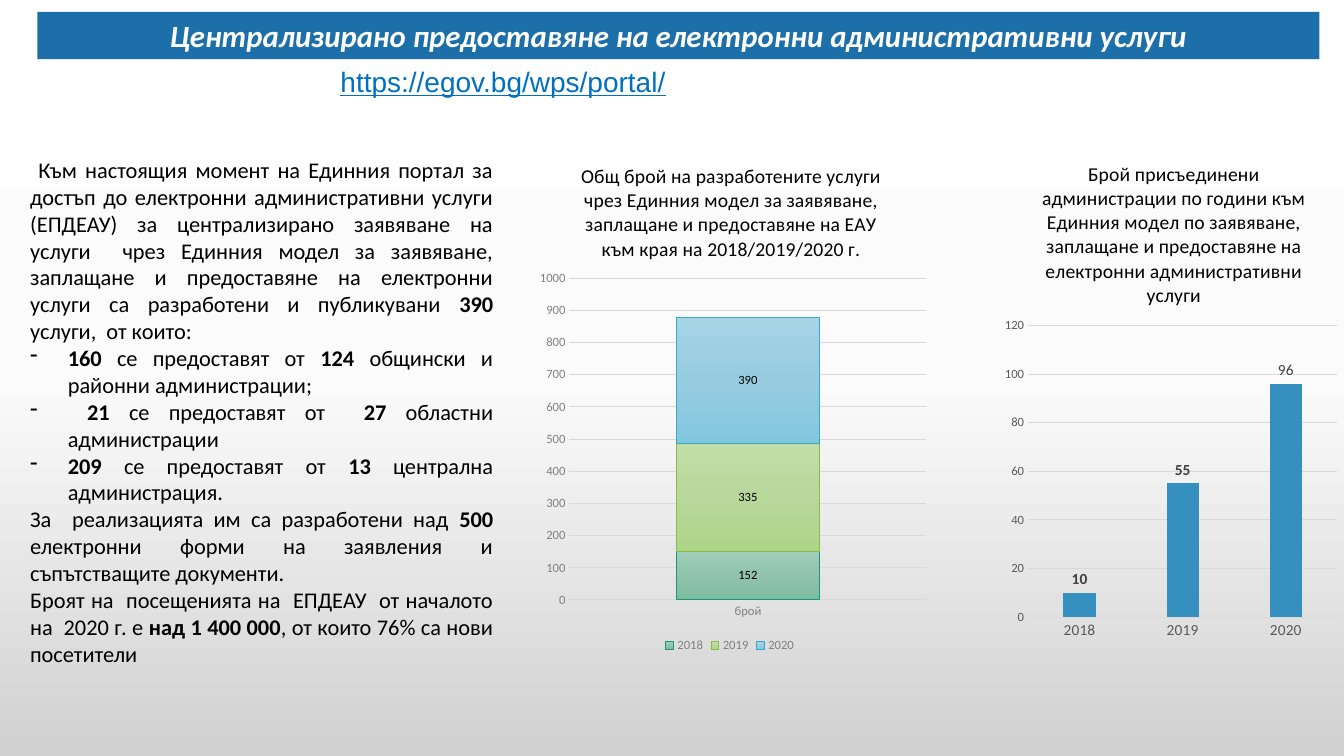
from copy import deepcopy
from dataclasses import dataclass
from typing import Any

from lxml.etree import SubElement
from pptx import Presentation
from pptx.chart.data import CategoryChartData
from pptx.dml.color import RGBColor
from pptx.enum.chart import XL_CHART_TYPE, XL_LABEL_POSITION, XL_LEGEND_POSITION, XL_TICK_MARK
from pptx.enum.shapes import MSO_SHAPE
from pptx.enum.text import MSO_ANCHOR, MSO_AUTO_SIZE, PP_ALIGN
from pptx.oxml.ns import qn
from pptx.util import Cm, Pt


@dataclass(frozen=True)
class Theme:
    """Colours and type sizes of the slide."""
    back: tuple = ("FFFFFF", "FBFBFB", "D1D1D1")
    bar: str = "1D6FA9"
    white: str = "FFFFFF"
    black: str = "000000"
    link: str = "0070C0"
    grid: str = "D9D9D9"
    gray: str = "808080"
    dark: str = "595959"
    label: str = "404040"
    blue: str = "3590BF"
    head: float = 22
    url: float = 20
    body: float = 16
    title: float = 14
    mid: float = 11
    small: float = 9


@dataclass(frozen=True)
class Series:
    """One series with its fill shades and outline."""
    name: str
    vals: tuple
    shades: tuple
    edge: str = ""


@dataclass(frozen=True)
class Graph:
    """One column chart with its place and plot area."""
    kind: Any
    box: tuple
    plot: tuple
    title: str
    cats: tuple
    series: tuple
    gap: int
    lap: int
    top: int
    step: int
    ink: str
    size: float
    legend: bool = False


THEME = Theme()
URL = "https://egov.bg/wps/portal/"
HEAD = "Централизирано предоставяне на електронни административни услуги"
BODY = (
    (False, " Към настоящия момент на Единния портал за достъп до електронни административни услуги "
            "(ЕПДЕАУ) за централизирано заявяване на услуги  чрез Единния модел за заявяване, "
            "заплащане и предоставяне на електронни услуги са разработени и публикувани "
            "*390* услуги,  от които: "),
    (True, "*160 *се предоставят от *124 *общински и районни администрации; "),
    (True, " *21* се предоставят от  *27* областни администрации"),
    (True, "*209 *се предоставят от *13* централна администрация. "),
    (False, "За  реализацията им са разработени над *500* електронни форми на заявления "
            "и съпътстващите документи. "),
    (False, "Броят на  посещенията на  ЕПДЕАУ  от началото на  2020 г. е "
            "*над 1 400 000*, от които 76% са нови посетители"),
)
GRAPHS = (
    Graph(XL_CHART_TYPE.COLUMN_CLUSTERED, (25.12, 3.43, 8.76, 12.9), (0.09, 0.37, 0.89, 0.57),
          "Брой присъединени администрации по години към Единния модел по заявяване, "
          "заплащане и предоставяне на електронни административни услуги",
          ("2018", "2019", "2020"), (Series("Series 1", (10, 55, 96), (THEME.blue,)),),
          219, -27, 120, 20, THEME.dark, THEME.mid),
    Graph(XL_CHART_TYPE.COLUMN_STACKED, (13.34, 3.48, 10.11, 13.08), (0.1, 0.27, 0.89, 0.62),
          "Общ брой на разработените услуги чрез Единния модел за заявяване, "
          "заплащане и предоставяне на ЕАУ към края на 2018/2019/2020 г.",
          ("брой",),
          (Series("2018", (152,), ("9ECDBA", "91C2AE", "7DBCA3"), "1C9775"),
           Series("2019", (335,), ("C2DEA8", "B8D79B", "AED588"), "88BD43"),
           Series("2020", (390,), ("A5D4E5", "97CCE0", "83C7DF"), "35ABC9")),
          150, 100, 1000, 100, THEME.gray, THEME.small, True),
)


def put(item: Any, vals: dict) -> None:
    """Set each named value on the item."""
    for key, val in vals.items():
        setattr(item, key, val)


def ink(font: Any, size: float, tint: str, face: str = "Calibri", **more: Any) -> None:
    """Style a font."""
    put(font, {"name": face, "size": Pt(size), **more})
    font.color.rgb = RGBColor.from_string(tint)


def rule(line: Any, tint: str) -> None:
    """Style a thin line."""
    line.width = Pt(0.75)
    line.color.rgb = RGBColor.from_string(tint)


def paint(fill: Any, root: Any, shades: tuple) -> None:
    """Fill with one colour or with a downward three-stop gradient."""
    if len(shades) == 1:
        fill.solid()
        fill.fore_color.rgb = RGBColor.from_string(shades[0])
        return
    fill.gradient()
    fill.gradient_angle = 270
    stops = next(root.iter(qn("a:gsLst")))
    stops.insert(1, deepcopy(stops[0]))
    for stop, tint, pos in zip(fill.gradient_stops, shades, (0, 0.5, 1)):
        stop.color.rgb = RGBColor.from_string(tint)
        stop.position = pos


def place(root: Any, vals: dict) -> None:
    """Give a chart part a manual layout."""
    for old in root.findall(qn("c:layout")):
        root.remove(old)
    lay = SubElement(root, qn("c:layout"))
    man = SubElement(lay, qn("c:manualLayout"))
    for key, val in vals.items():
        SubElement(man, qn(f"c:{key}")).set("val", str(val))
    spot = 1 if root.find(qn("c:tx")) is not None else 0
    root.insert(spot, lay)


def write(shape: Any, rows: tuple, align: Any, **style: Any) -> None:
    """Write paragraphs, with starred parts in bold and dashes where asked."""
    frame = shape.text_frame
    put(frame, {"word_wrap": True, "auto_size": MSO_AUTO_SIZE.SHAPE_TO_FIT_TEXT})
    for num, (dash, text) in enumerate(rows):
        para = frame.paragraphs[0] if num == 0 else frame.add_paragraph()
        para.alignment = align
        if dash:
            props = para._p.get_or_add_pPr()
            props.set("marL", str(Cm(0.95)))
            props.set("indent", str(-Cm(0.95)))
            SubElement(props, qn("a:buChar")).set("char", "-")
        for turn, part in enumerate(text.split("*")):
            if part:
                run = para.add_run()
                run.text = part
                ink(run.font, **{"bold": turn % 2 == 1, **style})


def draw(slide: Any, graph: Graph) -> None:
    """Add one chart."""
    data = CategoryChartData()
    data.categories = graph.cats
    for ser in graph.series:
        data.add_series(ser.name, ser.vals)
    chart = slide.shapes.add_chart(graph.kind, *map(Cm, graph.box), data).chart
    ink(chart.font, 10, THEME.black)
    put(chart, {"has_title": True, "has_legend": graph.legend})
    chart.chart_title.text_frame.text = graph.title
    ink(chart.chart_title.text_frame.paragraphs[0].runs[0].font, THEME.title, THEME.black, bold=False)
    place(chart.chart_title._element, {"xMode": "edge", "yMode": "edge", "x": 0.12, "y": 0.04})
    area = dict(zip("xywh", graph.plot))
    place(chart._chartSpace.chart.plotArea,
          {"layoutTarget": "inner", "xMode": "edge", "yMode": "edge", **area})
    if graph.legend:
        put(chart.legend, {"position": XL_LEGEND_POSITION.BOTTOM, "include_in_layout": False})
        ink(chart.legend.font, THEME.small, graph.ink)
    for axis, size in ((chart.category_axis, graph.size), (chart.value_axis, THEME.small)):
        put(axis, {"major_tick_mark": XL_TICK_MARK.NONE, "minor_tick_mark": XL_TICK_MARK.NONE})
        ink(axis.tick_labels.font, size, graph.ink)
    rule(chart.category_axis.format.line, THEME.grid)
    put(chart.value_axis, {"minimum_scale": 0, "maximum_scale": graph.top, "major_unit": graph.step})
    chart.value_axis.format.line.fill.background()
    rule(chart.value_axis.major_gridlines.format.line, THEME.grid)
    plot = chart.plots[0]
    put(plot, {"gap_width": graph.gap, "overlap": graph.lap, "vary_by_categories": False})
    for item, ser in zip(plot.series, graph.series):
        paint(item.format.fill, item._element, ser.shades)
        item.data_labels.show_value = True
        if ser.edge:
            rule(item.format.line, ser.edge)
            ink(item.data_labels.font, THEME.small, THEME.black)
        else:
            last = item.points[len(ser.vals) - 1].data_label
            for mark, bold in ((item.data_labels, True), (last, False)):
                mark.position = XL_LABEL_POSITION.OUTSIDE_END
                ink(mark.font, THEME.mid, THEME.label, bold=bold)


def main() -> None:
    """Build and save the slide."""
    deck = Presentation()
    put(deck, {"slide_width": Cm(33.87), "slide_height": Cm(19.05)})
    slide = deck.slides.add_slide(deck.slide_layouts[6])
    paint(slide.background.fill, slide._element, THEME.back)
    bar = slide.shapes.add_shape(MSO_SHAPE.RECTANGLE, *map(Cm, (0.94, 0.3, 32.31, 1.19)))
    bar.shadow.inherit = False
    paint(bar.fill, bar._element, (THEME.bar,))
    bar.line.fill.background()
    bar.text_frame.vertical_anchor = MSO_ANCHOR.MIDDLE
    write(bar, ((False, HEAD),), PP_ALIGN.CENTER, size=THEME.head, tint=THEME.white, bold=True, italic=True)
    body = slide.shapes.add_textbox(*map(Cm, (0.51, 3.81, 12.17, 13.26)))
    write(body, BODY, PP_ALIGN.JUSTIFY, size=THEME.body, tint=THEME.black)
    link = slide.shapes.add_textbox(*map(Cm, (8.33, 1.5, 13.61, 1.12)))
    write(link, ((False, URL),), PP_ALIGN.LEFT, size=THEME.url, tint=THEME.link, face="Arial", underline=True)
    for graph in GRAPHS:
        draw(slide, graph)
    deck.save("out.pptx")


if __name__ == "__main__":
    main()
